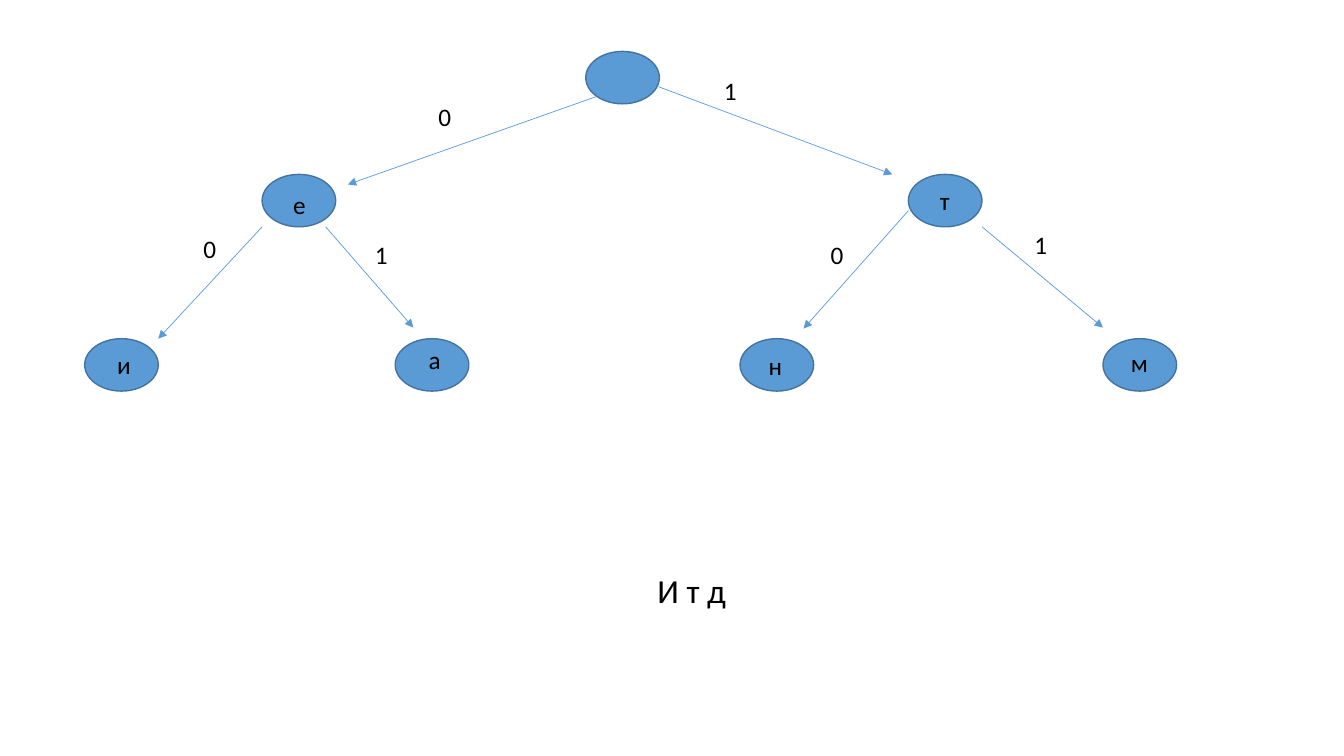
import pptx
import pptx.util
import pptx.dml.color
import pptx.enum.shapes
import pptx.enum.text
import pptx.oxml.ns
from lxml import etree

Inches, Pt = pptx.util.Inches, pptx.util.Pt
RGBColor = pptx.dml.color.RGBColor
PP_ALIGN = pptx.enum.text.PP_ALIGN

BLUE = RGBColor(0x5B, 0x9B, 0xD5)
DARK_BLUE = RGBColor(0x43, 0x73, 0x9E)
BLACK = RGBColor(0, 0, 0)
FONT = "Calibri"

# Content: tree nodes as (left, top)
NODE_SIZE = (0.73, 0.52)
NODES = [(5.81, 0.51),
         (2.6, 1.73), (9.01, 1.73),
         (0.84, 3.36), (3.92, 3.36), (7.34, 3.36), (10.94, 3.36)]

# Letters on the nodes: letter, left, top
LETTER_SIZE = (0.64, 0.41)
LETTERS = [("е", 2.65, 1.83), ("т", 9.05, 1.79),
           ("и", 0.91, 3.42), ("а", 3.99, 3.37),
           ("н", 7.37, 3.43), ("м", 10.98, 3.4)]

# Branches: start, end, bit, bit box (left, top, width)
BRANCHES = [
    ((5.91, 0.96), (3.45, 1.83), "0", (4.25, 0.96, 0.76)),
    ((6.53, 0.86), (8.85, 1.73), "1", (7.08, 0.7, 0.62)),
    ((2.6, 2.25), (1.57, 3.36), "0", (1.92, 2.27, 0.33)),
    ((3.23, 2.25), (4.1, 3.25), "1", (3.62, 2.33, 0.33)),
    ((9.01, 2.09), (7.97, 3.26), "0", (8.14, 2.33, 0.33)),
    ((9.74, 2.25), (10.94, 3.25), "1", (10.16, 2.23, 0.33)),
]
BIT_HEIGHT = 0.4

CLOSING = ("И т д", 3.78, 5.6, 6.16, 0.5)


def add_node(slide, left, top):
    node = slide.shapes.add_shape(
        pptx.enum.shapes.MSO_SHAPE.OVAL,
        *map(Inches, (left, top, *NODE_SIZE)))
    node.shadow.inherit = False
    node.fill.solid()
    node.fill.fore_color.rgb = BLUE
    node.line.color.rgb = DARK_BLUE
    node.line.width = Pt(1)


def add_arrow(slide, start, end):
    arrow = slide.shapes.add_connector(
        pptx.enum.shapes.MSO_CONNECTOR.STRAIGHT,
        *map(Inches, (*start, *end)))
    arrow.line.color.rgb = BLUE
    arrow.line.width = Pt(0.5)
    qn = pptx.oxml.ns.qn
    etree.SubElement(arrow.line._get_or_add_ln(), qn("a:tailEnd"), type="triangle")
    etree.SubElement(arrow._element.spPr, qn("a:effectLst"))


def add_label(slide, text, box, size=18, align=PP_ALIGN.CENTER, wrap=True):
    frame = slide.shapes.add_textbox(*map(Inches, box)).text_frame
    frame.word_wrap = wrap
    frame.auto_size = pptx.enum.text.MSO_AUTO_SIZE.SHAPE_TO_FIT_TEXT
    paragraph = frame.paragraphs[0]
    paragraph.alignment = align
    run = paragraph.add_run()
    run.text = text
    run.font.name = FONT
    run.font.size = Pt(size)
    run.font.color.rgb = BLACK


def main():
    deck = pptx.Presentation()
    deck.slide_width, deck.slide_height = Inches(13.33), Inches(7.5)
    slide = deck.slides.add_slide(deck.slide_layouts[6])

    # Tree
    for left, top in NODES:
        add_node(slide, left, top)
    for start, end, _, _ in BRANCHES:
        add_arrow(slide, start, end)

    # Bits and letters; the narrow bit boxes do not wrap
    for _, _, bit, (left, top, width) in BRANCHES:
        add_label(slide, bit, (left, top, width, BIT_HEIGHT),
                  align=PP_ALIGN.LEFT, wrap=width > 0.5)
    for letter, left, top in LETTERS:
        add_label(slide, letter, (left, top, *LETTER_SIZE))

    # Closing words
    closing, *closing_box = CLOSING
    add_label(slide, closing, closing_box, size=24)

    deck.save("out.pptx")


if __name__ == "__main__":
    main()
